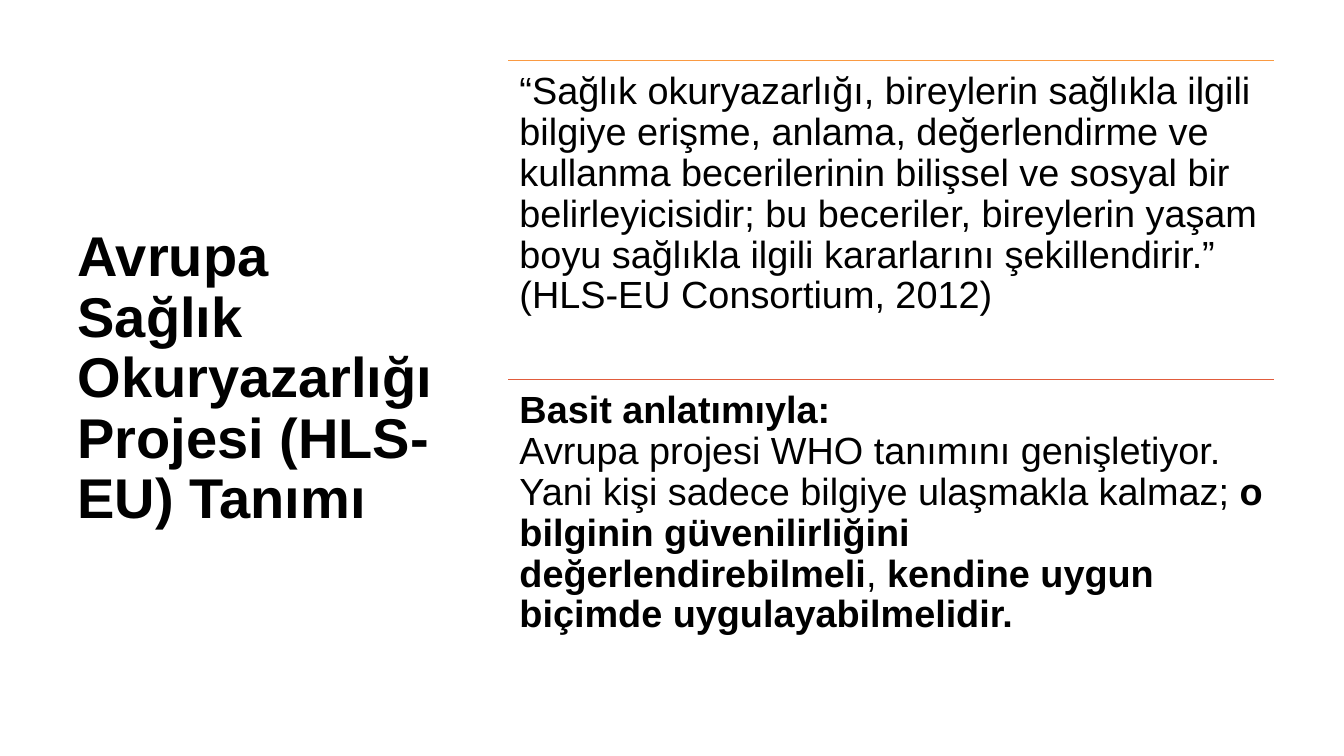
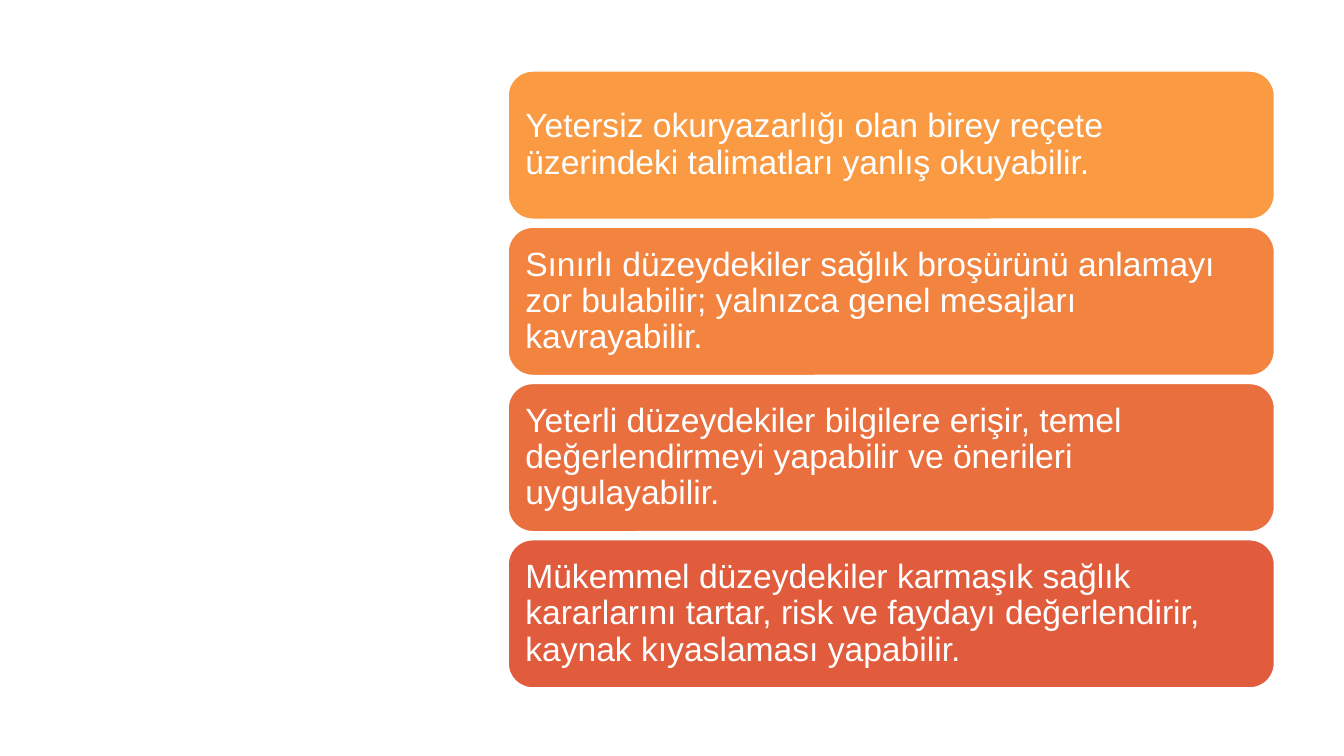
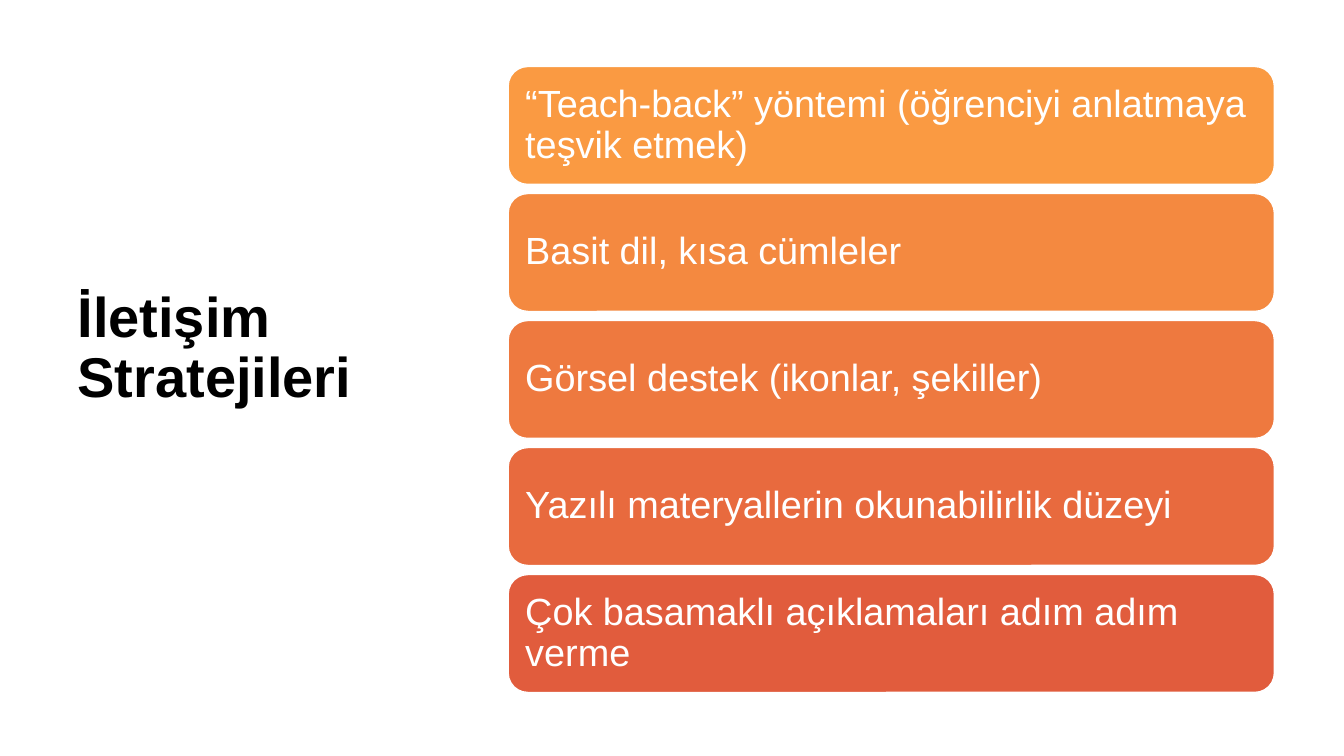
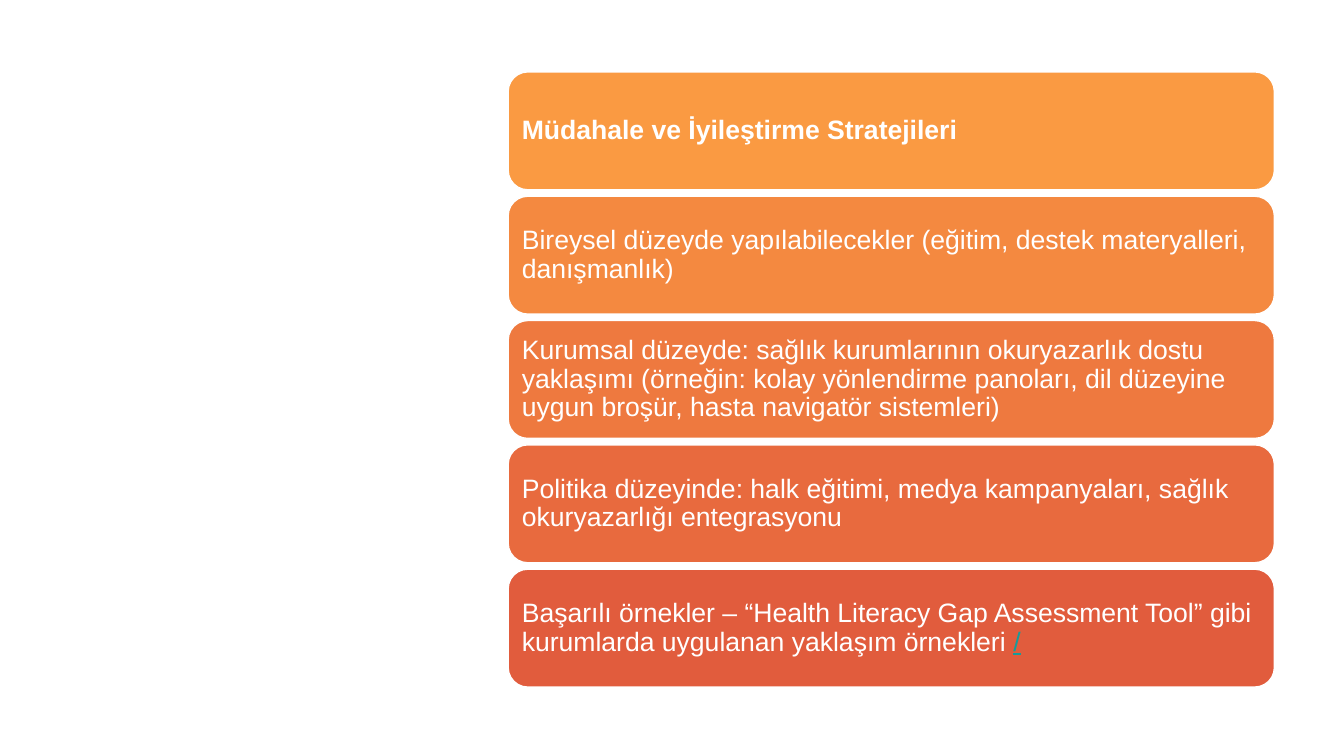
from dataclasses import dataclass

from lxml.etree import SubElement
from pptx import Presentation
from pptx.dml.color import RGBColor
from pptx.enum.shapes import MSO_CONNECTOR, MSO_SHAPE
from pptx.enum.text import MSO_ANCHOR, PP_ALIGN
from pptx.oxml.ns import qn
from pptx.util import Inches, Pt

# Shared style
FONT = "Arial"
BLACK = RGBColor(0x00, 0x00, 0x00)
WHITE = RGBColor(0xFF, 0xFF, 0xFF)
TEAL = RGBColor(0x16, 0x9C, 0x9A)
AMBER = RGBColor(0xFA, 0x9A, 0x42)
BRICK = RGBColor(0xE1, 0x5C, 0x3D)
FOUR_STEPS = [AMBER, RGBColor(0xF2, 0x84, 0x40), RGBColor(0xEA, 0x6F, 0x3E), BRICK]
FIVE_STEPS = [AMBER, RGBColor(0xF4, 0x89, 0x40), RGBColor(0xEE, 0x79, 0x3F),
              RGBColor(0xE8, 0x6A, 0x3E), BRICK]
TITLE_ONLY, BLANK = 5, 6


@dataclass
class Box:
    left: float
    top: float
    width: float
    height: float

    def inches(self):
        return [Inches(v) for v in (self.left, self.top, self.width, self.height)]


@dataclass
class Words:
    text: str
    bold: bool = False
    color: RGBColor = None
    underline: bool = False


TITLE_AREA = Box(0.67, 0.6, 3.82, 6.33)
CONTENT_AREA = Box(5.04, 0.6, 7.6, 6.33)


def write(frame, words, size, color, anchor):
    """Fill a frame with one left-aligned paragraph, run by run."""
    frame.word_wrap = True
    frame.vertical_anchor = anchor
    paragraph = frame.paragraphs[0]
    paragraph.alignment = PP_ALIGN.LEFT
    paragraph.line_spacing = 0.9
    for part in words:
        for number, line in enumerate(part.text.split("\n")):
            if number:
                paragraph.add_line_break()
            if not line:
                continue
            run = paragraph.add_run()
            run.text = line
            font = run.font
            font.name, font.size, font.bold = FONT, Pt(size), part.bold
            font.color.rgb = part.color or color
            if part.underline:
                font.underline = True


def set_margins(frame, size):
    """Inner margins grow with the text size."""
    margin = Inches(size / 240)
    frame.margin_left = frame.margin_right = margin
    frame.margin_top = frame.margin_bottom = margin


def add_title(slide, text, box, lift=0):
    title = slide.shapes.title
    title.left, title.top, title.width, title.height = box.inches()
    write(title.text_frame, [Words(text, bold=True)], 40, BLACK, MSO_ANCHOR.MIDDLE)
    title.text_frame.margin_bottom = Inches(0.05 + lift)


def add_ruled_texts(slide, texts, box, rule_colors, size):
    """Equal rows, each under a coloured rule."""
    row_height = box.height / len(texts)
    for row, (words, color) in enumerate(zip(texts, rule_colors)):
        cell = Box(box.left, box.top + row * row_height, box.width, row_height)
        left, top, width, height = cell.inches()
        rule = slide.shapes.add_connector(MSO_CONNECTOR.STRAIGHT, left, top, left + width, top)
        rule.line.color.rgb = color
        rule.line.width = Pt(1)
        SubElement(rule._element.spPr, qn("a:effectLst"))
        frame = slide.shapes.add_textbox(left, top, width, height).text_frame
        set_margins(frame, size)
        write(frame, words, size, BLACK, MSO_ANCHOR.TOP)


def add_card_stack(slide, cards, box, card_height, colors, size):
    """Rounded cards, centred vertically in the box."""
    pitch = card_height + size / 300
    stack_height = pitch * (len(cards) - 1) + card_height
    top = box.top + (box.height - stack_height) / 2
    for row, (words, color) in enumerate(zip(cards, colors)):
        place = Box(box.left, top + row * pitch, box.width, card_height)
        card = slide.shapes.add_shape(MSO_SHAPE.ROUNDED_RECTANGLE, *place.inches())
        card.shadow.inherit = False
        card.fill.solid()
        card.fill.fore_color.rgb = color
        card.line.color.rgb = WHITE
        card.line.width = Pt(1)
        set_margins(card.text_frame, size)
        write(card.text_frame, words, size, WHITE, MSO_ANCHOR.MIDDLE)


# Content
DEFINITIONS = [
    [Words("“Sağlık okuryazarlığı, bireylerin sağlıkla ilgili bilgiye erişme, anlama, "
           "değerlendirme ve kullanma becerilerinin bilişsel ve sosyal bir belirleyicisidir; "
           "bu beceriler, bireylerin yaşam boyu sağlıkla ilgili kararlarını şekillendirir.”\n"
           "(HLS-EU Consortium, 2012)")],
    [Words("Basit anlatımıyla:\n", bold=True),
     Words("Avrupa projesi WHO tanımını genişletiyor.\n"
           "Yani kişi sadece bilgiye ulaşmakla kalmaz; "),
     Words("o bilginin güvenilirliğini değerlendirebilmeli", bold=True),
     Words(", "),
     Words("kendine uygun biçimde uygulayabilmelidir.", bold=True)],
]
LITERACY_LEVELS = [
    [Words("Yetersiz okuryazarlığı olan birey reçete üzerindeki talimatları yanlış okuyabilir.")],
    [Words("Sınırlı düzeydekiler sağlık broşürünü anlamayı zor bulabilir; "
           "yalnızca genel mesajları kavrayabilir.")],
    [Words("Yeterli düzeydekiler bilgilere erişir, temel değerlendirmeyi yapabilir "
           "ve önerileri uygulayabilir.")],
    [Words("Mükemmel düzeydekiler karmaşık sağlık kararlarını tartar, "
           "risk ve faydayı değerlendirir, kaynak kıyaslaması yapabilir.")],
]
COMMUNICATION = [
    [Words("“Teach-back” yöntemi (öğrenciyi anlatmaya teşvik etmek)")],
    [Words("Basit dil, kısa cümleler")],
    [Words("Görsel destek (ikonlar, şekiller)")],
    [Words("Yazılı materyallerin okunabilirlik düzeyi")],
    [Words("Çok basamaklı açıklamaları adım adım verme")],
]
INTERVENTIONS = [
    [Words("Müdahale ve İyileştirme Stratejileri", bold=True)],
    [Words("Bireysel düzeyde yapılabilecekler (eğitim, destek materyalleri, danışmanlık)")],
    [Words("Kurumsal düzeyde: sağlık kurumlarının okuryazarlık dostu yaklaşımı "
           "(örneğin: kolay yönlendirme panoları, dil düzeyine uygun broşür, "
           "hasta navigatör sistemleri)")],
    [Words("Politika düzeyinde: halk eğitimi, medya kampanyaları, "
           "sağlık okuryazarlığı entegrasyonu")],
    [Words("Başarılı örnekler – “Health Literacy Gap Assessment Tool” gibi "
           "kurumlarda uygulanan yaklaşım örnekleri "),
     Words("/", color=TEAL, underline=True)],
]


def main():
    deck = Presentation()
    deck.slide_width, deck.slide_height = Inches(13.33), Inches(7.5)

    def new_slide(layout):
        return deck.slides.add_slide(deck.slide_layouts[layout])

    # Definition
    definition = new_slide(TITLE_ONLY)
    add_title(definition, "Avrupa Sağlık Okuryazarlığı Projesi (HLS-EU) Tanımı", TITLE_AREA)
    add_ruled_texts(definition, DEFINITIONS, CONTENT_AREA, [AMBER, BRICK], 27)

    # Literacy levels
    add_card_stack(new_slide(BLANK), LITERACY_LEVELS, CONTENT_AREA, 1.47, FOUR_STEPS, 24)

    # Communication strategies
    communication = new_slide(TITLE_ONLY)
    add_title(communication, "İletişim Stratejileri", TITLE_AREA, lift=0.6)
    add_card_stack(communication, COMMUNICATION, CONTENT_AREA, 1.17, FIVE_STEPS, 27)

    # Interventions
    add_card_stack(new_slide(BLANK), INTERVENTIONS, CONTENT_AREA, 1.17, FIVE_STEPS, 19)

    deck.save("out.pptx")


if __name__ == "__main__":
    main()
